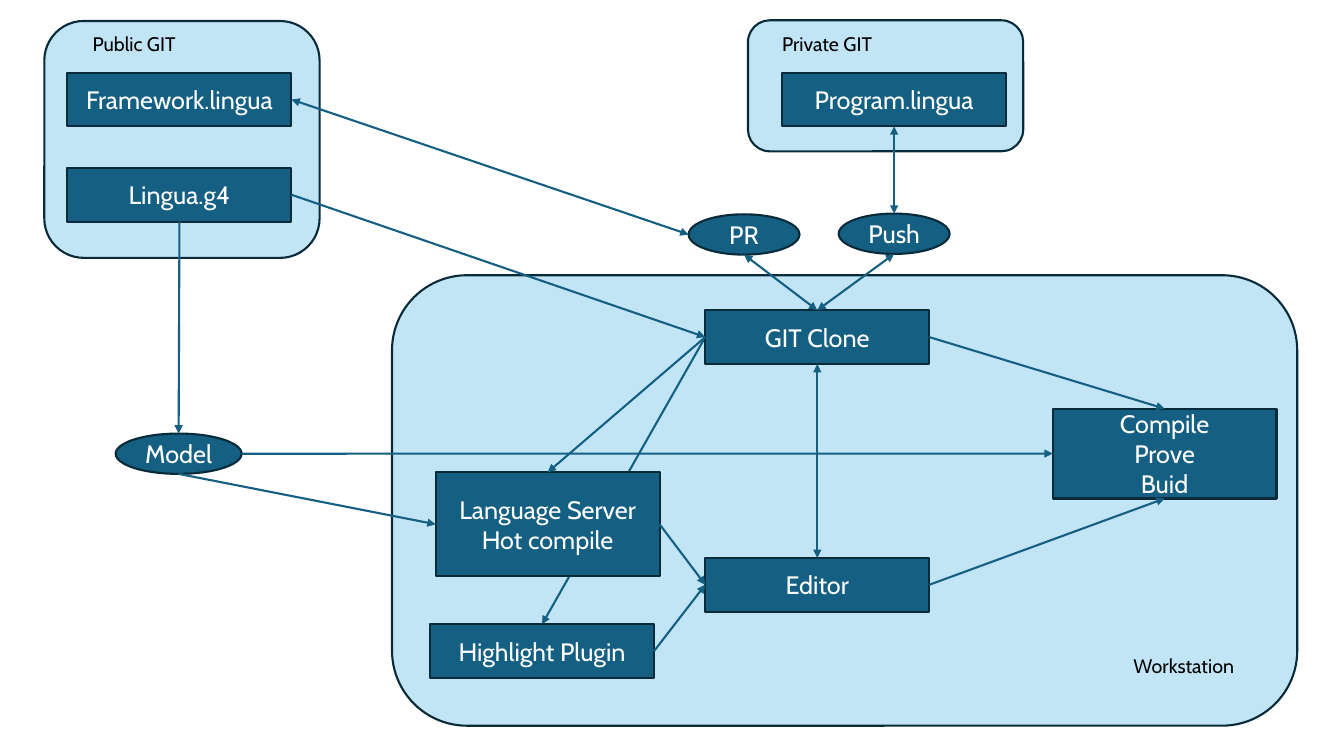
from lxml.etree import SubElement
from pptx import Presentation
from pptx.dml.color import RGBColor
from pptx.enum.shapes import MSO_CONNECTOR, MSO_SHAPE
from pptx.enum.text import MSO_ANCHOR, MSO_AUTO_SIZE, PP_ALIGN
from pptx.oxml.ns import qn
from pptx.util import Pt

FONT = "Cabin"
BLUE, PALE, OUTLINE = "156082", "C1E5F5", "092A39"
TOP, LEFT, BOTTOM, RIGHT = range(4)
BOX_W, BOX_H = 160, 38.4

prs = Presentation()
prs.slide_width, prs.slide_height = Pt(960), Pt(540)
shapes = prs.slides.add_slide(prs.slide_layouts[6]).shapes


def add_block(kind, left, top, width, height, fill):
    sp = shapes.add_shape(kind, Pt(left), Pt(top), Pt(width), Pt(height))
    sp.shadow.inherit = False
    sp.fill.solid()
    sp.fill.fore_color.rgb = RGBColor.from_string(fill)
    sp.line.color.rgb = RGBColor.from_string(OUTLINE)
    sp.line.width = Pt(1.5)
    return sp


def side_point(sp, side):
    """Return the middle of one side of a shape as x, y."""
    x = sp.left + sp.width * {LEFT: 0, RIGHT: 2}.get(side, 1) // 2
    y = sp.top + sp.height * {TOP: 0, BOTTOM: 2}.get(side, 1) // 2
    return x, y


# Zones
for left, top, width, height in [
    (280, 196.6, 646.6, 321.8),
    (31.7, 15, 196.6, 169.2),
    (534.3, 14.5, 196.6, 93.6),
]:
    add_block(MSO_SHAPE.ROUNDED_RECTANGLE, left, top, width, height, PALE)

# Files, tools and actions
RECT, OVAL = MSO_SHAPE.RECTANGLE, MSO_SHAPE.OVAL
nodes = {}
for name, kind, left, top, width, height, text in [
    ("grammar", RECT, 48.2, 119.9, BOX_W, BOX_H, "Lingua.g4"),
    ("framework", RECT, 48.2, 51.9, BOX_W, BOX_H, "Framework.lingua"),
    ("program", RECT, 558.7, 51.9, BOX_W, BOX_H, "Program.lingua"),
    ("clone", RECT, 503.8, 221.6, BOX_W, BOX_H, "GIT Clone"),
    ("push", OVAL, 599.1, 152.6, 79.2, 28.8, "Push"),
    ("pr", OVAL, 491.9, 153.1, 79.2, 28.8, "PR"),
    ("editor", RECT, 503.8, 398.5, BOX_W, BOX_H, "Editor"),
    ("highlight", RECT, 307.2, 445.9, BOX_W, BOX_H, "Highlight Plugin"),
    ("server", RECT, 311.2, 337.4, BOX_W, 74.2, "Language Server\nHot compile"),
    ("model", OVAL, 82.6, 309.7, 90, 28.8, "Model"),
    ("compile", RECT, 751.9, 291.9, BOX_W, 64.2, "Compile\nProve\nBuid"),
]:
    sp = nodes[name] = add_block(kind, left, top, width, height, BLUE)
    tf = sp.text_frame
    tf.text = text
    tf.vertical_anchor = MSO_ANCHOR.MIDDLE
    for p in tf.paragraphs:
        p.alignment = PP_ALIGN.CENTER
        p.font.name, p.font.size = FONT, Pt(18)
        p.font.color.rgb = RGBColor.from_string("FFFFFF")

# Arrows
for start, start_side, end, end_side, ends in [
    ("clone", LEFT, "highlight", TOP, ["tailEnd"]),
    ("grammar", RIGHT, "clone", LEFT, ["tailEnd"]),
    ("framework", RIGHT, "pr", LEFT, ["headEnd", "tailEnd"]),
    ("pr", BOTTOM, "clone", TOP, ["headEnd", "tailEnd"]),
    ("program", BOTTOM, "push", TOP, ["headEnd", "tailEnd"]),
    ("clone", TOP, "push", BOTTOM, ["headEnd", "tailEnd"]),
    ("clone", LEFT, "server", TOP, ["tailEnd"]),
    ("grammar", BOTTOM, "model", TOP, ["tailEnd"]),
    ("model", BOTTOM, "server", LEFT, ["tailEnd"]),
    ("clone", BOTTOM, "editor", TOP, ["headEnd", "tailEnd"]),
    ("server", RIGHT, "editor", LEFT, ["tailEnd"]),
    ("highlight", RIGHT, "editor", LEFT, ["tailEnd"]),
    ("model", RIGHT, "compile", LEFT, ["tailEnd"]),
    ("clone", RIGHT, "compile", TOP, ["tailEnd"]),
    ("editor", RIGHT, "compile", BOTTOM, ["tailEnd"]),
]:
    source, target = nodes[start], nodes[end]
    arrow = shapes.add_connector(
        MSO_CONNECTOR.STRAIGHT,
        *side_point(source, start_side), *side_point(target, end_side))
    if source.auto_shape_type == RECT:
        arrow.begin_connect(source, start_side)
    if target.auto_shape_type == RECT:
        arrow.end_connect(target, end_side)
    arrow.line.color.rgb = RGBColor.from_string(BLUE)
    arrow.line.width = Pt(1.5)
    for tag in ends:
        SubElement(arrow.line._get_or_add_ln(), qn(f"a:{tag}"), type="triangle")
    SubElement(arrow._element.spPr, qn("a:effectLst"))
    if (start, end) == ("clone", "highlight"):
        # This arrow passes behind the language server
        nodes["grammar"]._element.addprevious(arrow._element)

# Zone labels
for text, left, top, width in [
    ("Public GIT", 59, 19.4, 138.2),
    ("Private GIT", 551.5, 19.4, 138.2),
    ("Workstation", 802.5, 463.8, 119.5),
]:
    sp = shapes.add_textbox(Pt(left), Pt(top), Pt(width), Pt(24.5))
    tf = sp.text_frame
    tf.word_wrap = True
    tf.auto_size = MSO_AUTO_SIZE.SHAPE_TO_FIT_TEXT
    p = tf.paragraphs[0]
    p.text = text
    p.font.name, p.font.size = FONT, Pt(14)
    p.font.color.rgb = RGBColor.from_string("000000")

prs.save("out.pptx")
